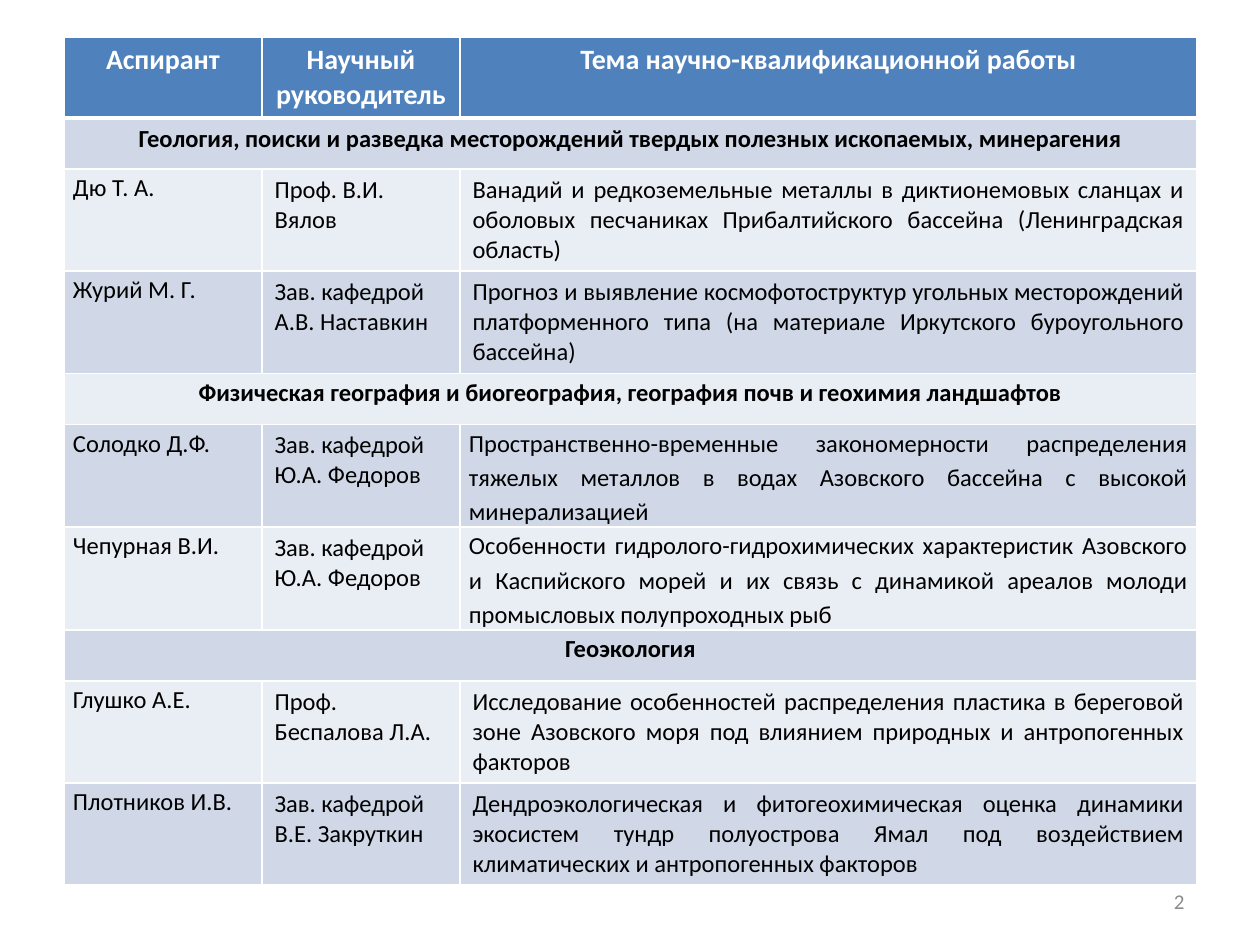
from lxml.etree import SubElement
from pptx import Presentation
from pptx.dml.color import RGBColor
from pptx.enum.text import MSO_ANCHOR, PP_ALIGN
from pptx.oxml.ns import qn
from pptx.util import Pt

EMU_PER_PX = 914400 / 126
COLUMNS = [198, 198, 737]
ROW_HEIGHT = 51
HEADER_FILL = "4F81BD"
BANDS = ["E9EDF4", "D0D8E8"]

HEADER = ["Аспирант", "Научный руководитель", "Тема научно-квалификационной работы"]
ROWS = [
    ["Геология, поиски и разведка месторождений твердых полезных ископаемых, минерагения"],
    ["Дю Т. А.", "Проф. В.И. Вялов",
     "Ванадий и редкоземельные металлы в диктионемовых сланцах и оболовых песчаниках "
     "Прибалтийского бассейна (Ленинградская область)"],
    ["Журий М. Г.", "Зав. кафедрой А.В. Наставкин",
     "Прогноз и выявление космофотоструктур угольных месторождений платформенного типа "
     "(на материале Иркутского буроугольного бассейна)"],
    ["Физическая география и биогеография, география почв и геохимия ландшафтов"],
    ["Солодко Д.Ф.", "Зав. кафедрой Ю.А. Федоров",
     "Пространственно-временные закономерности распределения тяжелых металлов "
     "в водах Азовского бассейна с высокой минерализацией"],
    ["Чепурная В.И.", "Зав. кафедрой Ю.А. Федоров",
     "Особенности гидролого-гидрохимических характеристик Азовского и Каспийского морей "
     "и их связь с динамикой ареалов молоди промысловых полупроходных рыб"],
    ["Геоэкология"],
    ["Глушко А.Е.", "Проф. Беспалова Л.А.",
     "Исследование особенностей распределения пластика в береговой зоне Азовского моря "
     "под влиянием природных и антропогенных факторов"],
    ["Плотников И.В.", "Зав. кафедрой В.Е. Закруткин",
     "Дендроэкологическая и фитогеохимическая оценка динамики экосистем тундр "
     "полуострова Ямал под воздействием климатических и антропогенных факторов"],
]
SPACED_TOPIC_ROWS = {5, 6}


def px(n):
    return round(n * EMU_PER_PX)


def rgb(color):
    return RGBColor.from_string(color)


def write(tf, text, size=14, color="000000", bold=False, align=PP_ALIGN.LEFT, spacing=None):
    p = tf.paragraphs[0]
    p.alignment = align
    if spacing:
        p.line_spacing = spacing
    r = p.add_run()
    r.text = text
    r.font.name = "Calibri"
    r.font.size = Pt(size)
    r.font.bold = bold
    r.font.color.rgb = rgb(color)


def set_borders(cell, top=1, bottom=1):
    tc_pr = cell._tc.get_or_add_tcPr()
    for side, width in {"L": 1, "R": 1, "T": top, "B": bottom}.items():
        ln = SubElement(tc_pr, qn(f"a:ln{side}"), w=str(Pt(width)))
        fill = SubElement(ln, qn("a:solidFill"))
        SubElement(fill, qn("a:srgbClr"), val="FFFFFF")


def style_row(table, row, fill, **borders):
    for col in range(len(COLUMNS)):
        cell = table.cell(row, col)
        set_borders(cell, **borders)
        cell.fill.solid()
        cell.fill.fore_color.rgb = rgb(fill)


def tighten(cell):
    cell.margin_left = cell.margin_right = px(9)
    cell.margin_top = cell.margin_bottom = 0


def add_header(table):
    style_row(table, 0, HEADER_FILL, bottom=3)
    for col, text in enumerate(HEADER):
        write(table.cell(0, col).text_frame, text, size=16, color="FFFFFF",
              bold=True, align=PP_ALIGN.CENTER)


def add_section(table, row, title):
    cell = table.cell(row, 0)
    cell.merge(table.cell(row, len(COLUMNS) - 1))
    spacing = None
    if row > 1:
        tighten(cell)
        spacing = 1.15
    write(cell.text_frame, title, bold=True, align=PP_ALIGN.CENTER, spacing=spacing)


def add_student(table, row, name, adviser, topic):
    name_cell, adviser_cell, topic_cell = (table.cell(row, col) for col in range(3))
    tighten(name_cell)
    write(name_cell.text_frame, name, spacing=1.15)
    write(adviser_cell.text_frame, adviser)
    spacing = None
    if row in SPACED_TOPIC_ROWS:
        tighten(topic_cell)
        topic_cell.vertical_anchor = MSO_ANCHOR.MIDDLE
        spacing = 1.15
    write(topic_cell.text_frame, topic, align=PP_ALIGN.JUSTIFY, spacing=spacing)


def add_topics_table(s):
    count = len(ROWS) + 1
    frame = s.shapes.add_table(count, len(COLUMNS), px(64), px(37),
                               px(sum(COLUMNS)), px(ROW_HEIGHT * count))
    table = frame.table
    for column, width in zip(table.columns, COLUMNS):
        column.width = px(width)
    add_header(table)
    for row, texts in enumerate(ROWS, 1):
        style_row(table, row, BANDS[row % 2], top=3 if row == 1 else 1)
        add_row = add_section if len(texts) == 1 else add_student
        add_row(table, row, *texts)


def add_page_number(s, number):
    sp = s.shapes.add_textbox(px(903), px(876), px(294), px(50))
    tf = sp.text_frame
    tf.word_wrap = True
    tf.vertical_anchor = MSO_ANCHOR.MIDDLE
    write(tf, number, size=12, color="8C8C8C", align=PP_ALIGN.RIGHT)


def main():
    prs = Presentation()
    prs.slide_width, prs.slide_height = px(1260), px(945)
    s = prs.slides.add_slide(prs.slide_layouts[6])
    add_topics_table(s)
    add_page_number(s, "2")
    prs.save("out.pptx")


if __name__ == "__main__":
    main()
